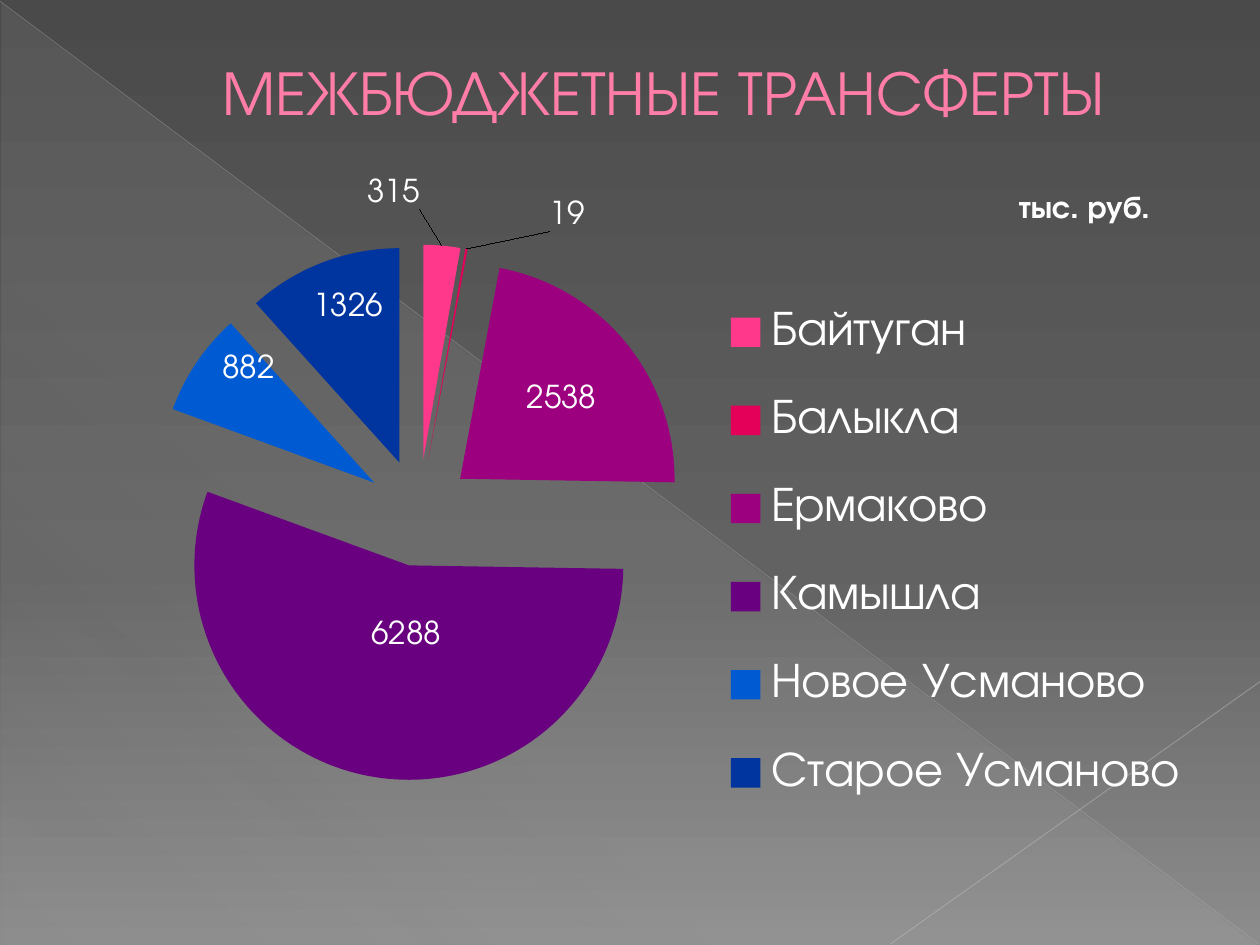
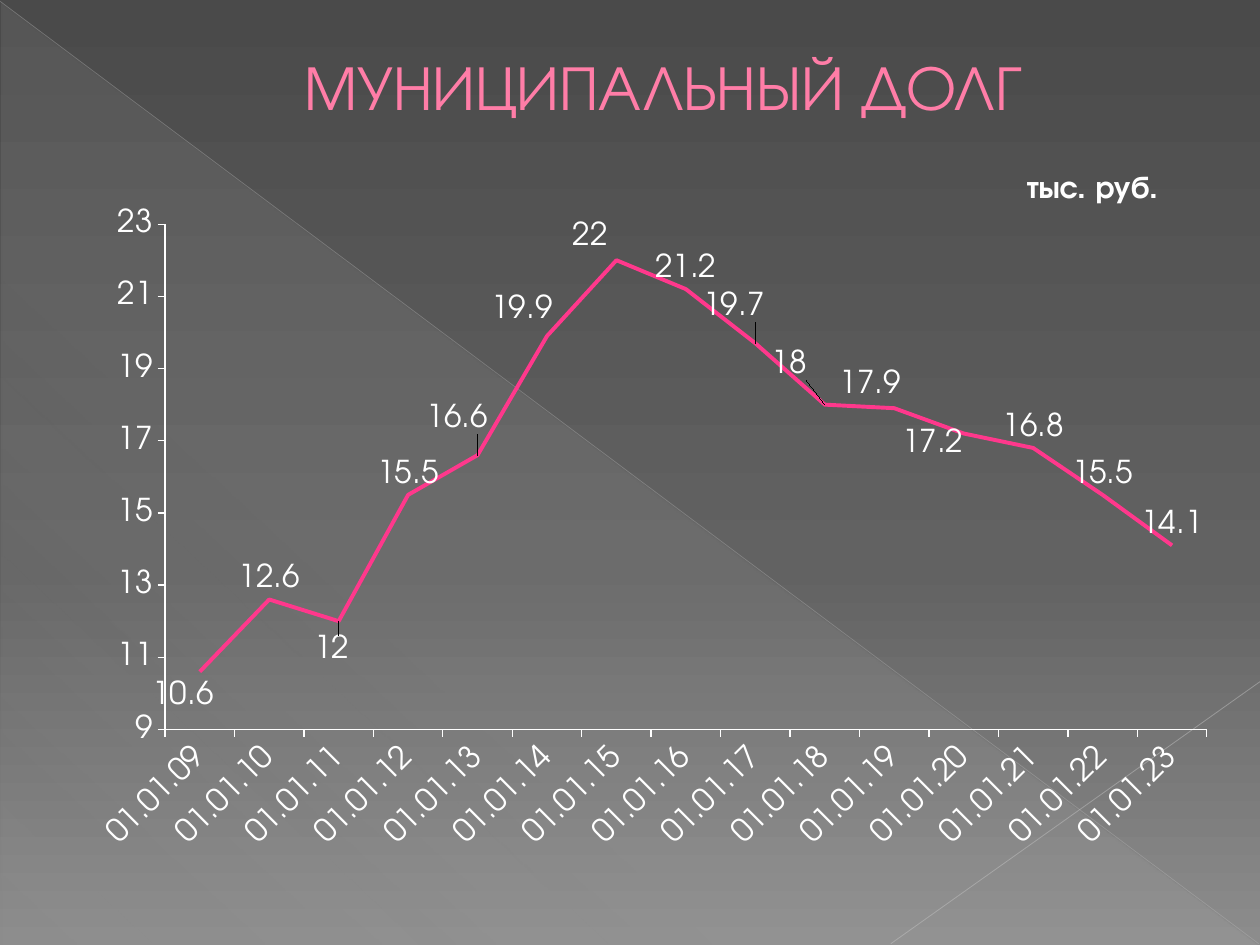
from lxml.etree import SubElement
from pptx import Presentation
from pptx.chart.data import CategoryChartData
from pptx.dml.color import RGBColor
from pptx.enum.chart import (XL_CHART_TYPE as CT, XL_LABEL_POSITION as LP,
                             XL_LEGEND_POSITION, XL_MARKER_STYLE, XL_TICK_MARK)
from pptx.enum.shapes import MSO_CONNECTOR, MSO_SHAPE
from pptx.enum.text import MSO_ANCHOR, PP_ALIGN
from pptx.oxml.ns import qn
from pptx.util import Inches, Pt

WIDTH, HEIGHT = 10, 7.5
COLS, ROWS = 100, 75
FONT = "TeX Gyre Adventor"
WHITE, PINK, TITLE, OUTLINE = "FFFFFF", "FF388C", "FF7DA7", "B12761"
BACKDROP = [(0, "4A4A4A", 100), (60, "626262", 100), (100, "8C8C8C", 100)]
SHEEN = [(0, "D2D2D2", 10), (70, "D2D2D2", 8), (100, "D2D2D2", 1)]
UNIT = "тыс. руб."


def rgb(value):
    return RGBColor.from_string(value)


def child(parent, tag, **attrs):
    return SubElement(parent, qn(tag), {k: str(v) for k, v in attrs.items()})


def set_alpha(clr, percent):
    child(clr, "a:alpha", val=percent * 1000)


def set_gradient(fill, root, stops, angle):
    """Give fill, which lies inside the element root, its own stops."""
    fill.gradient()
    grad = root.find(".//" + qn("a:gradFill"))
    for old in list(grad):
        grad.remove(old)
    stop_list = child(grad, "a:gsLst")
    for pos, color, alpha in stops:
        clr = child(child(stop_list, "a:gs", pos=pos * 1000),
                    "a:srgbClr", val=color)
        if alpha < 100:
            set_alpha(clr, alpha)
    child(grad, "a:lin", ang=angle * 60000, scaled=0)


def set_layout(parent, x, y, w=None, h=None, index=0, edge=True, inner=False):
    """Place a chart part; lengths are percent of the chart's size."""
    old = parent.find(qn("c:layout"))
    if old is not None:
        parent.remove(old)
    layout = child(parent, "c:layout")
    manual = child(layout, "c:manualLayout")
    if inner:
        child(manual, "c:layoutTarget", val="inner")
    if edge:
        child(manual, "c:xMode", val="edge")
        child(manual, "c:yMode", val="edge")
    for tag, share in zip("xywh", (x, y, w, h)):
        if share is not None:
            child(manual, "c:" + tag, val=round(share / 100, 4))
    overlay = parent.find(qn("c:overlay"))
    if overlay is not None:
        overlay.addprevious(layout)
    else:
        parent.insert(index, layout)


def set_font(font, size, color=WHITE, bold=False):
    font.name, font.size, font.bold = FONT, Pt(size), bold
    font.color.rgb = rgb(color)


class Deck:
    def __init__(self):
        self.prs = Presentation()
        self.prs.slide_width = Inches(WIDTH)
        self.prs.slide_height = Inches(HEIGHT)
        self.slide = None

    def x(self, cols):
        return int(self.prs.slide_width * cols / COLS)

    def y(self, rows):
        return int(self.prs.slide_height * rows / ROWS)

    def box(self, left, top, width, height):
        return self.x(left), self.y(top), self.x(width), self.y(height)

    def new_slide(self, title, title_height):
        self.slide = self.prs.slides.add_slide(self.prs.slide_layouts[6])
        set_gradient(self.slide.background.fill, self.slide.element,
                     BACKDROP, 90)
        self.triangle(0.1, 0.2, 99.8, 74.8)
        self.line((0, 0.1), (99.9, 74.9), "BFBFBF", 0.39, 35)
        self.line((100, 54.1), (70.7, 74.9), "C6C6C6", 0.47, 45)
        self.title(title, title_height)

    def triangle(self, *place):
        sp = self.slide.shapes.add_shape(MSO_SHAPE.RIGHT_TRIANGLE,
                                         *self.box(*place))
        sp.shadow.inherit = False
        sp.line.fill.background()
        set_gradient(sp.fill, sp.element, SHEEN, 133)

    def line(self, start, end, color, width, alpha):
        ln = self.slide.shapes.add_connector(
            MSO_CONNECTOR.STRAIGHT, self.x(start[0]), self.y(start[1]),
            self.x(end[0]), self.y(end[1]))
        ln.line.color.rgb = rgb(color)
        ln.line.width = Pt(width)
        set_alpha(ln.element.find(".//" + qn("a:srgbClr")), alpha)
        child(ln.element.spPr, "a:effectLst")

    def title(self, text, height):
        tf = self.slide.shapes.add_textbox(
            *self.box(5, 2.9, 90, height)).text_frame
        tf.word_wrap = True
        tf.vertical_anchor = MSO_ANCHOR.MIDDLE
        p = tf.paragraphs[0]
        p.alignment = PP_ALIGN.CENTER
        p_pr = p._p.get_or_add_pPr()
        p_pr.set("marL", str(self.x(5.3)))
        p_pr.set("indent", "0")
        r = p.add_run()
        r.text = text
        set_font(r.font, 36, TITLE)
        ln = child(r._r.get_or_add_rPr(), "a:ln", w=Pt(0.5))
        child(child(ln, "a:solidFill"), "a:srgbClr", val=OUTLINE)
        r._r.rPr.insert(0, ln)

    def chart(self, kind, place, categories, values, plot_place):
        data = CategoryChartData()
        data.categories = categories
        data.add_series("Series 1", values)
        chart = self.slide.shapes.add_chart(kind, *self.box(*place),
                                            data).chart
        set_font(chart.font, 18)
        chart.has_legend = False
        chart.has_title = True
        r = chart.chart_title.text_frame.paragraphs[0].add_run()
        r.text = UNIT
        set_font(r.font, 18, bold=True)
        set_layout(chart.chart_title.element, 82.8, 2.8)
        plot_area = chart.element.find(".//" + qn("c:plotArea"))
        set_layout(plot_area, *plot_place, inner=True)
        child(child(plot_area, "c:spPr"), "a:noFill")
        sp_pr = child(chart.element, "c:spPr")
        child(sp_pr, "a:noFill")
        child(child(sp_pr, "a:ln"), "a:noFill")
        chart.element.find(qn("c:chart")).addnext(sp_pr)
        return chart

    def labels(self, chart, position, point_position, offsets):
        """Show values; offsets shift single labels, in percent of the chart."""
        series = chart.plots[0].series[0]
        labels = series.data_labels
        labels.show_value = True
        labels.position = position
        set_font(labels.font, 18)
        for i, (dx, dy) in offsets.items():
            label = series.points[i].data_label
            set_font(label.font, 18)
            label.position = point_position
            element = chart.element.xpath(f'.//c:dLbl[c:idx/@val="{i}"]')[0]
            set_layout(element, dx, dy, index=1, edge=False)

    def pie(self, place, slices, offsets, plot_place, legend_place):
        chart = self.chart(CT.PIE, place, [s[0] for s in slices],
                           [s[1] for s in slices], plot_place)
        plot = chart.plots[0]
        plot.vary_by_categories = True
        for i, (_, _, color) in enumerate(slices):
            form = plot.series[0].points[i].format
            form.fill.solid()
            form.fill.fore_color.rgb = rgb(color)
            form.line.fill.background()
        first = chart.element.find(".//" + qn("c:dPt"))
        first.addprevious(child(first.getparent(), "c:explosion", val=25))
        self.labels(chart, LP.CENTER, LP.OUTSIDE_END, offsets)
        chart.has_legend = True
        legend = chart.legend
        legend.position = XL_LEGEND_POSITION.RIGHT
        legend.include_in_layout = False
        set_font(legend.font, 28)
        set_layout(legend._element, *legend_place)

    def line_chart(self, place, categories, values, offsets, plot_place):
        chart = self.chart(CT.LINE, place, categories, values, plot_place)
        plot = chart.plots[0]
        plot.vary_by_categories = False
        series = plot.series[0]
        series.smooth = False
        series.marker.style = XL_MARKER_STYLE.NONE
        series.format.line.color.rgb = rgb(PINK)
        series.format.line.width = Pt(2.25)
        for axis in (chart.category_axis, chart.value_axis):
            axis.has_major_gridlines = False
            axis.major_tick_mark = XL_TICK_MARK.OUTSIDE
            axis.minor_tick_mark = XL_TICK_MARK.NONE
            axis.format.line.color.rgb = rgb(WHITE)
            axis.format.line.width = Pt(0.75)
            set_font(axis.tick_labels.font, 18)
        value_axis = chart.value_axis
        value_axis.minimum_scale, value_axis.maximum_scale = 9, 23
        value_axis.major_unit = 2
        body = chart.category_axis._element.find(".//" + qn("a:bodyPr"))
        body.set("rot", str(-45 * 60000))
        body.set("vert", "horz")
        self.labels(chart, LP.ABOVE, LP.ABOVE, offsets)


def transfers_slide(deck):
    deck.new_slide("МЕЖБЮДЖЕТНЫЕ ТРАНСФЕРТЫ", 8.6)
    villages = [("Байтуган", 315, PINK), ("Балыкла", 19, "E40059"),
                ("Ермаково", 2538, "9C007F"), ("Камышла", 6288, "68007F"),
                ("Новое Усманово", 882, "005BD3"),
                ("Старое Усманово", 1326, "00349E")]
    offsets = {0: (-4.2, -4), 1: (7, -1.4), 2: (-9, 10.6),
               3: (6.2, -22.4), 4: (7.2, 3.7), 5: (5.4, 9.3)}
    deck.pie((3.5, 13.1, 92.9, 57.5), villages, offsets,
             plot_place=(0, 11, 64, 74), legend_place=(57.6, 14, 40.5, 79))


def debt_slide(deck):
    deck.new_slide("МУНИЦИПАЛЬНЫЙ ДОЛГ", 7.8)
    dates = [f"01.01.{year:02}" for year in range(9, 24)]
    debt = [10.6, 12.6, 12, 15.5, 16.6, 19.9, 22, 21.2,
            19.7, 18, 17.9, 17.2, 16.8, 15.5, 14.1]
    offsets = {0: (-1.4, 6), 2: (-0.6, 6.7), 4: (-1.7, -2.2),
               5: (-2.1, -0.8), 6: (-2.2, -0.4), 8: (-1.8, -2.2),
               9: (-3, -2.6), 10: (-2, -0.4), 11: (-2.6, 4.1)}
    deck.line_chart((2.8, 11.5, 94.5, 58.3), dates, debt, offsets,
                    plot_place=(10.9, 10.8, 87.5, 68.8))


def main():
    deck = Deck()
    transfers_slide(deck)
    debt_slide(deck)
    deck.prs.save("out.pptx")


if __name__ == "__main__":
    main()
